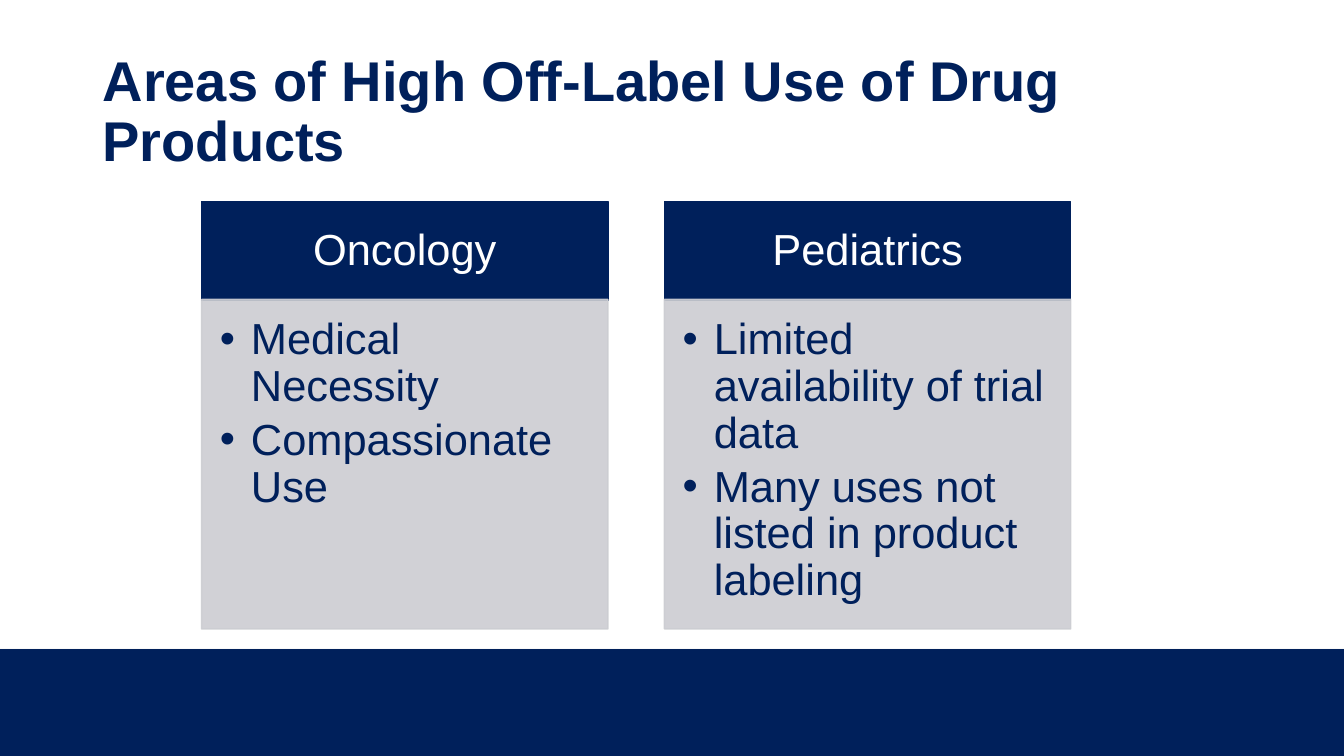
from lxml import etree
from pptx import Presentation
from pptx.dml.color import RGBColor
from pptx.enum.shapes import MSO_SHAPE
from pptx.enum.text import MSO_ANCHOR, PP_ALIGN
from pptx.oxml.ns import qn
from pptx.util import Inches, Pt

RECTANGLE = MSO_SHAPE.RECTANGLE
MIDDLE, TOP = MSO_ANCHOR.MIDDLE, MSO_ANCHOR.TOP
LEFT, CENTER = PP_ALIGN.LEFT, PP_ALIGN.CENTER
NAVY, GRAY, WHITE, PALE = "00205B", "CCCDD2", "FFFFFF", "F8F8F8"

COLUMN_LEFT, COLUMN_STEP, COLUMN_WIDTH = 2, 4.59, 4.03
COLUMNS = [
    ("Oncology", ["Medical Necessity", "Compassionate Use"]),
    ("Pediatrics", ["Limited availability of trial data",
                    "Many uses not listed in product labeling"]),
]


def add_rectangle(left, top, width, height, color, line_width=0, opacity=100):
    box = slide.shapes.add_shape(RECTANGLE, Inches(left), Inches(top),
                                 Inches(width), Inches(height))
    box.shadow.inherit = False
    box.fill.solid()
    box.fill.fore_color.rgb = RGBColor.from_string(color)
    if line_width:
        box.line.color.rgb = RGBColor.from_string(color)
        box.line.width = Pt(line_width)
    else:
        box.line.fill.background()
    if opacity < 100:
        for fill_color in box._element.spPr.iter(qn("a:srgbClr")):
            etree.SubElement(fill_color, qn("a:alpha"), val=str(opacity * 1000))
    return box


def write_text(box, lines, size, color, anchor, align, insets, space_after=0,
               bold=False, bulleted=False):
    """Fill a box with paragraphs; insets are left, top, right, bottom in inches."""
    frame = box.text_frame
    frame.word_wrap = True
    frame.vertical_anchor = anchor
    (frame.margin_left, frame.margin_top,
     frame.margin_right, frame.margin_bottom) = map(Inches, insets)
    frame.text = "\n".join(lines)
    for para in frame.paragraphs:
        para.alignment = align
        para.line_spacing = 0.9
        para.space_after = Pt(space_after)
        if bulleted:
            para.level = 1
            properties = para._p.get_or_add_pPr()
            properties.set("marL", str(Inches(0.31)))
            properties.set("indent", str(Inches(-0.31)))
            etree.SubElement(properties, qn("a:buFont"), typeface="Arial")
            etree.SubElement(properties, qn("a:buChar"), char="•")
        for span in para.runs:
            span.font.name = "Arial"
            span.font.size = Pt(size)
            span.font.bold = bold
            span.font.color.rgb = RGBColor.from_string(color)


deck = Presentation()
deck.slide_width, deck.slide_height = Inches(13.33), Inches(7.5)
slide = deck.slides.add_slide(deck.slide_layouts[6])

# Footer band with a thin pale edge
add_rectangle(0, 6.43, 13.33, 1.07, PALE)
add_rectangle(0, 6.44, 13.33, 1.06, NAVY)

title = slide.shapes.add_textbox(Inches(0.92), Inches(0.4), Inches(11.5), Inches(1.45))
write_text(title, ["Areas of High Off-Label Use of Drug Products"], 40, NAVY,
           MIDDLE, LEFT, (0.1, 0.05, 0.1, 0.05), bold=True)

for index, (heading, points) in enumerate(COLUMNS):
    left = COLUMN_LEFT + index * COLUMN_STEP
    header = add_rectangle(left, 2, COLUMN_WIDTH, 0.98, NAVY, line_width=1)
    write_text(header, [heading], 31, WHITE, MIDDLE, CENTER, (0.24, 0.14, 0.24, 0.14))
    body = add_rectangle(left, 2.97, COLUMN_WIDTH, 3.27, GRAY, line_width=1, opacity=90)
    write_text(body, points, 31, NAVY, TOP, LEFT, (0.18, 0.18, 0.24, 0.27),
               space_after=4.5, bulleted=True)

deck.save("out.pptx")
